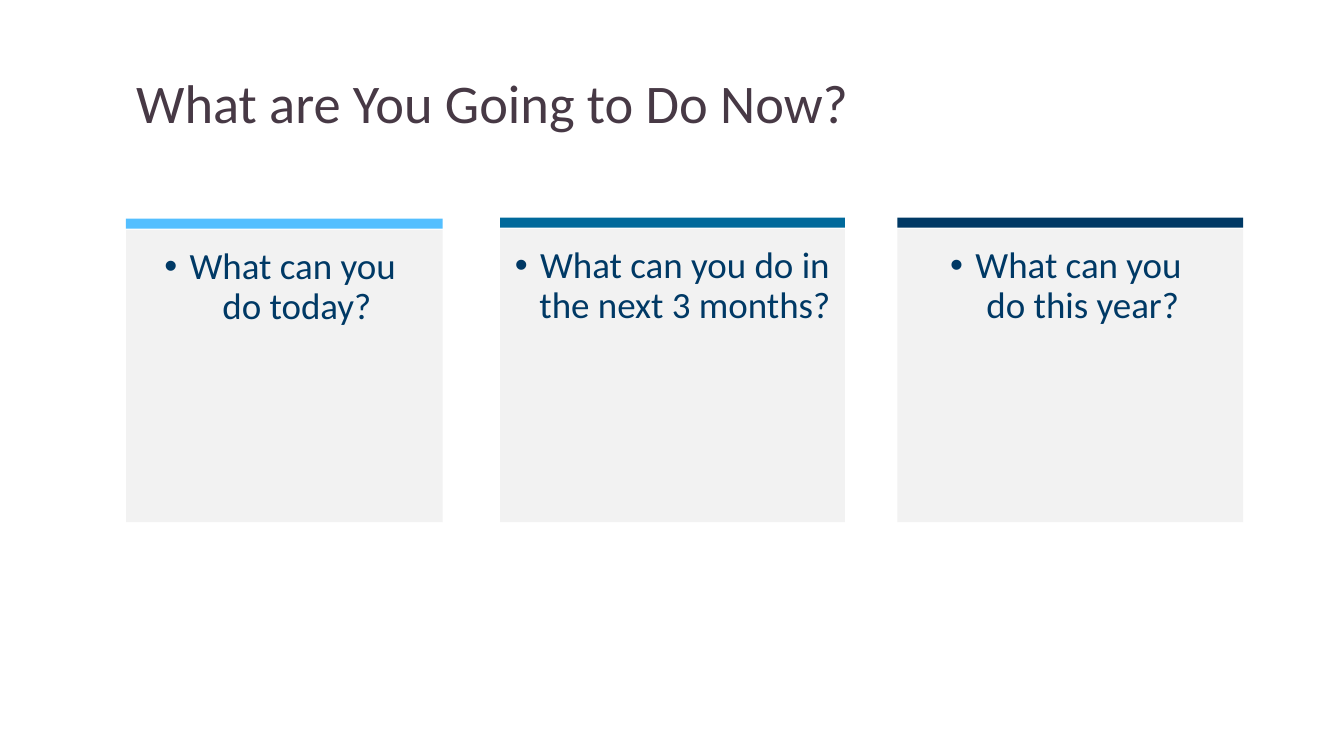
"""Build the slide asking what can be done today, in three months and this year."""
from lxml import etree
from pptx import Presentation
from pptx import util as u
from pptx.dml.color import RGBColor
from pptx.enum import shapes, text
from pptx.oxml.ns import qn


def paint(fill, color):
    fill.solid()
    fill.fore_color.rgb = RGBColor.from_string(color)


def place(shape, left, top, width, height):
    shape.left, shape.top = u.Inches(left), u.Inches(top)
    shape.width, shape.height = u.Inches(width), u.Inches(height)


presentation = Presentation()
presentation.slide_width = u.Inches(13.33)
presentation.slide_height = u.Inches(7.5)
slide = presentation.slides.add_slide(presentation.slide_layouts.get_by_name("Comparison"))

title = slide.shapes.title
place(title, 1.25, 0.77, 10.11, 0.56)
title.text_frame.text = "What are You Going to Do Now?"
title.text_frame.auto_size = text.MSO_AUTO_SIZE.NONE
title.text_frame.vertical_anchor = text.MSO_ANCHOR.MIDDLE
paragraph = title.text_frame.paragraphs[0]
paragraph.alignment = text.PP_ALIGN.LEFT
paragraph.line_spacing = 0.9
paragraph.font.name = "Calibri"
paragraph.font.size = u.Pt(38.9)
paragraph.font.color.rgb = RGBColor.from_string("473945")

cards = [
    ("What can you \vdo today?", 1.25, 2.28, 3.14, "54BFFF"),
    ("What can you do in the next 3 months?", 4.96, 2.27, 3.42, "00699B"),
    ("What can you \vdo this year?", 8.9, 2.27, 3.43, "003965"),
]
title_holder, *bodies, spare = slide.placeholders
for body, (question, left, top, width, accent) in zip(bodies, cards):
    place(body, left, top, width, 5.18 - top)
    paint(body.fill, "F2F2F2")
    frame = body.text_frame
    frame.text = question
    frame.auto_size = text.MSO_AUTO_SIZE.NONE
    frame.vertical_anchor = text.MSO_ANCHOR.TOP
    frame.margin_left = frame.margin_right = u.Inches(0.09)
    frame.margin_top, frame.margin_bottom = u.Inches(0.18), 0

    paragraph = frame.paragraphs[0]
    paragraph.alignment = text.PP_ALIGN.CENTER
    paragraph.line_spacing = 0.9
    paragraph.space_before = u.Pt(0)
    properties = paragraph._p.get_or_add_pPr()
    properties.set("marL", str(u.Inches(0.25)))
    properties.set("indent", str(u.Inches(-0.25)))
    etree.SubElement(properties, qn("a:buFont")).set("typeface", "Arial")
    etree.SubElement(properties, qn("a:buChar")).set("char", "•")
    paragraph.font.name = "Calibri"
    paragraph.font.size = u.Pt(26.4)
    paragraph.font.bold = False
    paragraph.font.color.rgb = RGBColor.from_string("003965")

    bar = slide.shapes.add_shape(
        shapes.MSO_SHAPE.RECTANGLE,
        u.Inches(left), u.Inches(top - 0.11), u.Inches(width), u.Inches(0.1))
    bar.shadow.inherit = False
    paint(bar.fill, accent)
    bar.line.fill.background()

spare.element.getparent().remove(spare.element)

presentation.save("out.pptx")
